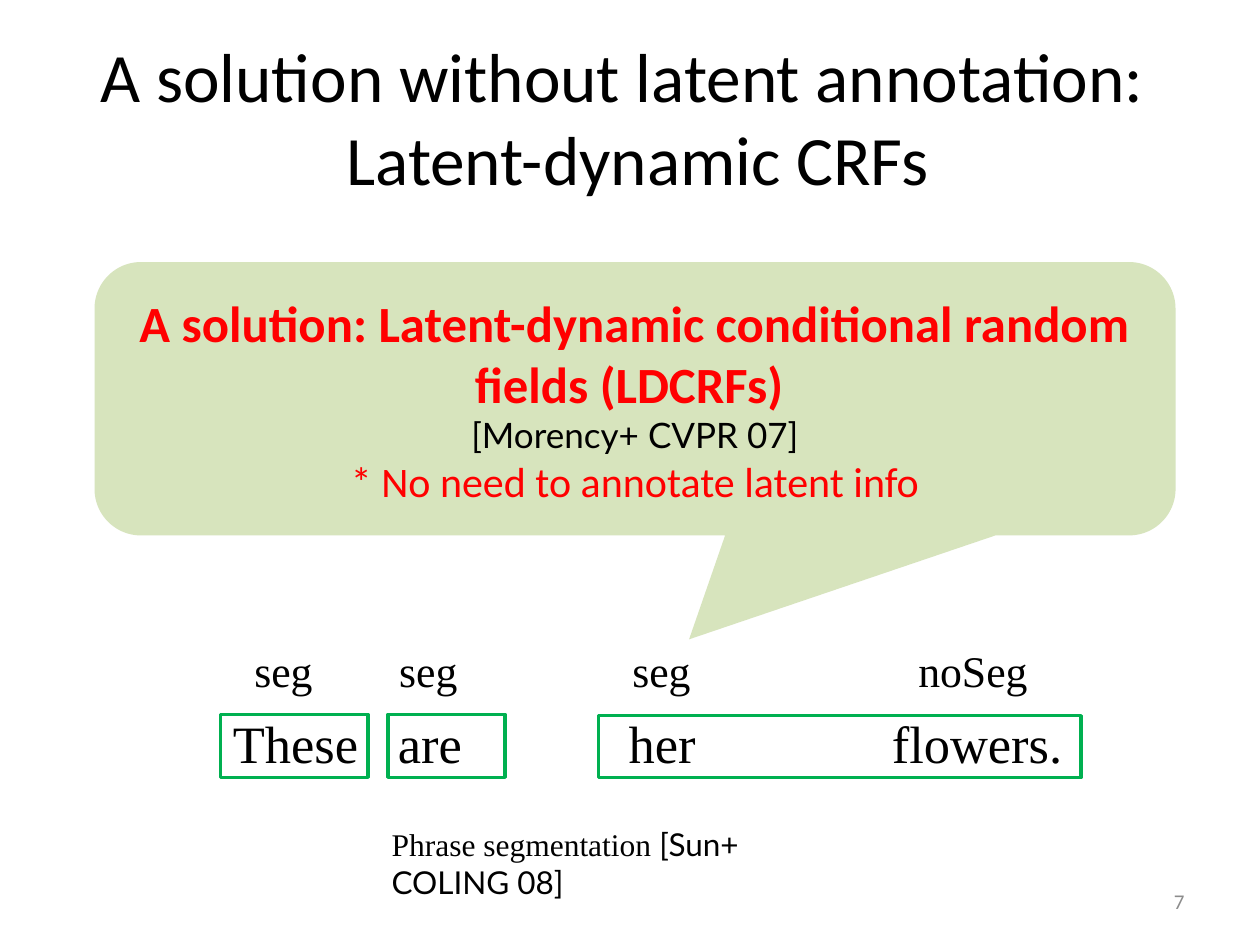
from pptx import Presentation
from pptx.dml.color import RGBColor
from pptx.enum.shapes import MSO_SHAPE
from pptx.enum.text import MSO_ANCHOR, PP_ALIGN
from pptx.oxml.ns import qn
from pptx.util import Inches, Pt
from lxml.etree import SubElement

SERIF = "Times New Roman"


def color(value):
    return RGBColor.from_string(value)


def add_span(para, text, size=18, font="Calibri", fill="000000", bold=False):
    span = para.add_run()
    span.text = text
    span.font.size = Pt(size)
    span.font.name = font
    span.font.bold = bold
    span.font.color.rgb = color(fill)


def set_tabs(para, stops):
    tab_list = SubElement(para._p.get_or_add_pPr(), qn("a:tabLst"))
    for stop in stops:
        SubElement(tab_list, qn("a:tab"), pos=str(Inches(stop)), algn="l")


class Page:
    text_color = "000000"
    callout_fill = "D7E4BD"
    outline = "00B050"

    def __init__(self, deck):
        self.slide = deck.slides.add_slide(deck.slide_layouts[5])
        self.shapes = self.slide.shapes

    def title(self, lines, left, top, width, height):
        box = self.shapes.title
        box.left, box.top = Inches(left), Inches(top)
        box.width, box.height = Inches(width), Inches(height)
        frame = box.text_frame
        frame.vertical_anchor = MSO_ANCHOR.MIDDLE
        para = frame.paragraphs[0]
        para.alignment = PP_ALIGN.CENTER
        for index, line in enumerate(lines):
            if index:
                para.add_line_break()
            add_span(para, line, size=39.6, fill=self.text_color)

    def text(self, spans, left, top, width, height, align=PP_ALIGN.LEFT,
             anchor=MSO_ANCHOR.TOP, right_inset=0.1, tabs=()):
        box = self.shapes.add_textbox(Inches(left), Inches(top),
                                      Inches(width), Inches(height))
        frame = box.text_frame
        frame.word_wrap = True
        frame.margin_right = Inches(right_inset)
        frame.vertical_anchor = anchor
        para = frame.paragraphs[0]
        para.alignment = align
        if tabs:
            set_tabs(para, tabs)
        for text, style in spans:
            add_span(para, text, **style)

    def frame(self, left, top, width, height):
        box = self.shapes.add_shape(MSO_SHAPE.RECTANGLE, Inches(left),
                                    Inches(top), Inches(width), Inches(height))
        box.shadow.inherit = False
        box.fill.background()
        box.line.color.rgb = color(self.outline)
        box.line.width = Pt(2)

    def callout(self, lines, left, top, width, height, adjustments):
        box = self.shapes.add_shape(MSO_SHAPE.ROUNDED_RECTANGULAR_CALLOUT,
                                    Inches(left), Inches(top),
                                    Inches(width), Inches(height))
        box.shadow.inherit = False
        box.fill.solid()
        box.fill.fore_color.rgb = color(self.callout_fill)
        box.line.fill.background()
        for index, value in enumerate(adjustments):
            box.adjustments[index] = value
        frame = box.text_frame
        frame.word_wrap = True
        frame.vertical_anchor = MSO_ANCHOR.MIDDLE
        for index, (text, style) in enumerate(lines):
            para = frame.add_paragraph() if index else frame.paragraphs[0]
            para.alignment = PP_ALIGN.CENTER
            add_span(para, text, **style)


def main():
    deck = Presentation()
    deck.slide_width, deck.slide_height = Inches(10), Inches(7.5)
    page = Page(deck)

    page.title(["A solution without latent annotation: ",
                " Latent-dynamic CRFs"], 0.5, 0.3, 9, 1.25)

    # Example sentence with its segments framed
    page.text([("These\tare\ther\tflowers.", dict(size=30, font=SERIF))],
              1.75, 5.59, 6.86, 0.61, tabs=(1.31, 3.14, 5.23))
    for left, top, width, height in ((4.75, 5.68, 3.83, 0.49),
                                     (3.08, 5.67, 0.93, 0.5),
                                     (1.75, 5.67, 1.17, 0.5)):
        page.frame(left, top, width, height)

    # Labels above the words
    page.text([("seg\tseg\tseg\tnoSeg", dict(size=25, font=SERIF))],
              1.92, 5.06, 6.43, 0.52, tabs=(1.15, 3, 5.27))

    # Callout with the proposed model
    page.callout([
        ("A solution: Latent-dynamic conditional random fields (LDCRFs) ",
         dict(size=29, fill="FF0000", bold=True)),
        ("[Morency+ CVPR 07]", dict(size=20, font="Lato")),
        ("* No need to annotate latent info", dict(size=24, fill="FF0000")),
    ], 0.75, 2.08, 8.58, 2.17, (0.05, 0.88, 0.17))

    # Task caption and page number
    page.text([("Phrase segmentation ", dict(font=SERIF)),
               ("[Sun+ COLING 08]", dict(font="Lato"))],
              3.01, 6.5, 3.87, 0.4, right_inset=0.7)
    page.text([("7", dict(size=12, fill="8C8C8C"))], 7.17, 6.95, 2.33, 0.4,
              align=PP_ALIGN.RIGHT, anchor=MSO_ANCHOR.MIDDLE)

    deck.save("out.pptx")


if __name__ == "__main__":
    main()
